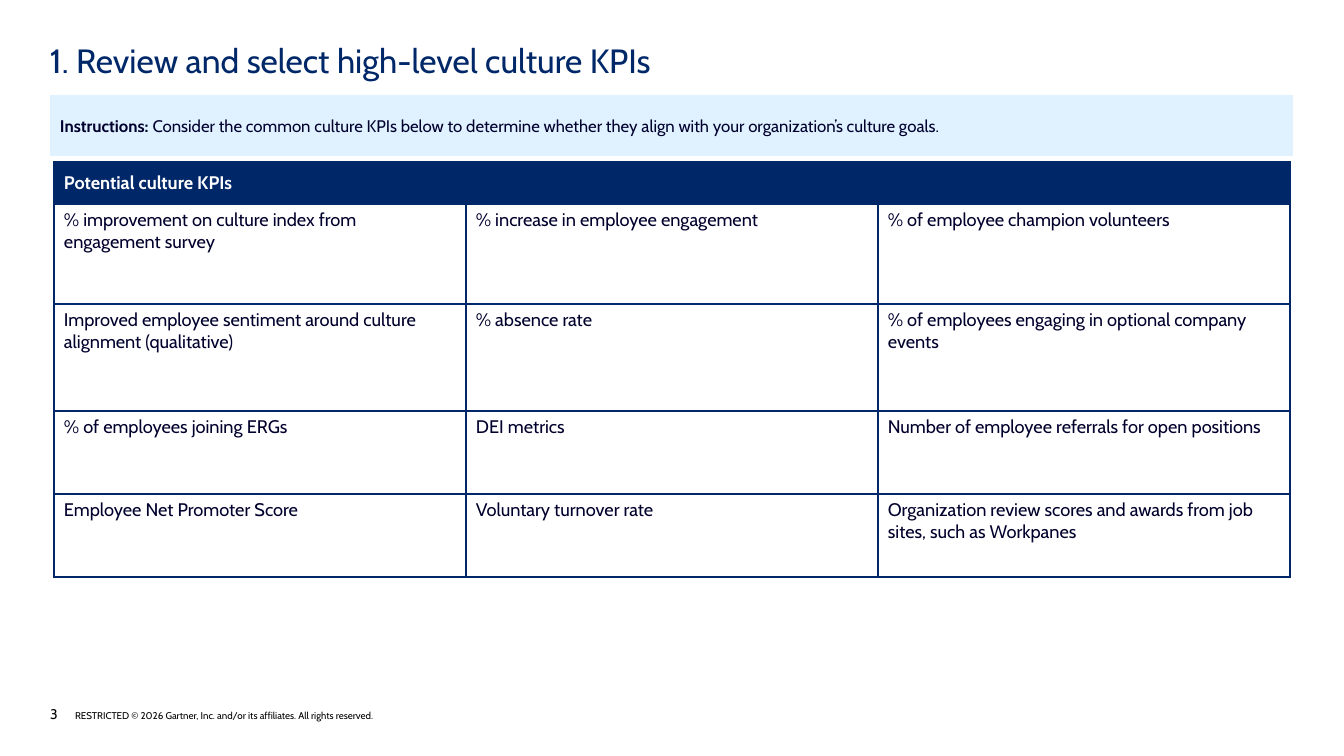
"""Build the slide for reviewing and selecting high-level culture KPIs."""
from dataclasses import dataclass

from lxml import etree
from pptx import Presentation
from pptx import util as u
from pptx.dml.color import RGBColor
from pptx.enum import shapes, text
from pptx.oxml.ns import qn

TITLE = "1. Review and select high-level culture KPIs"
INSTRUCTIONS = (
    "Instructions:",
    " Consider the common culture KPIs below to determine whether they align "
    "with your organization’s culture goals.",
)
TABLE_HEADING = "Potential culture KPIs"
KPIS = [
    ("% improvement on culture index from engagement survey",
     "% increase in employee engagement",
     "% of employee champion volunteers"),
    ("Improved employee sentiment around culture alignment (qualitative)",
     "% absence rate",
     "% of employees engaging in optional company events"),
    ("% of employees joining ERGs",
     "DEI metrics",
     "Number of employee referrals for open positions"),
    ("Employee Net Promoter Score",
     "Voluntary turnover rate",
     "Organization review scores and awards from job sites, such as Workpanes"),
]
PAGE_NUMBER = "3"
COPYRIGHT = "\tRESTRICTED © 2026 Gartner, Inc. and/or its affiliates. All rights reserved."

SLIDE_SIZE = (1344, 756)
LEFT, WIDTH = 50, 1243
TITLE_BOX = (LEFT, 40, WIDTH, 49)
BANNER_BOX = (LEFT, 95, WIDTH, 61)
FOOTER_BOX = (LEFT, 705, 805, 17)
FOOTER_INDENT = 25
TABLE_ORIGIN = (54, 162)
COLUMN_WIDTH = 412
ROW_HEIGHTS = (42, 100, 107, 83, 83)
INSETS = (10, 5, 10, 5)


@dataclass(frozen=True)
class Theme:
    """Hold the font, colours and type sizes."""
    font: str = "Cabin"
    navy: str = "002869"
    ink: str = "00002D"
    pale: str = "E0F1FF"
    white: str = "FFFFFF"
    black: str = "000000"
    title: int = 24
    banner: int = 12
    table: int = 13
    page: int = 10
    copyright: int = 7
    border: float = 1.5


THEME = Theme()


def px(length):
    """Turn px into EMU."""
    return u.Emu(round(length * 914400 / 100.8))


def box(bounds):
    """Turn px bounds into EMU."""
    return [px(length) for length in bounds]


def write(paragraph, words, *, size, color, bold=False):
    """Add one formatted run to a paragraph."""
    run = paragraph.add_run()
    run.text = words
    run.font.name = THEME.font
    run.font.size = u.Pt(size)
    run.font.bold = bold
    run.font.color.rgb = RGBColor.from_string(color)


def set_insets(target, insets):
    """Set the four inner margins of a text frame or cell."""
    for side, inset in zip(("left", "top", "right", "bottom"), insets):
        setattr(target, f"margin_{side}", px(inset))


def prepare_frame(shape, anchor, insets=(0, 0, 0, 0)):
    """Set up a text frame and return its first paragraph."""
    frame = shape.text_frame
    frame.word_wrap = True
    frame.vertical_anchor = anchor
    set_insets(frame, insets)
    frame.paragraphs[0].alignment = text.PP_ALIGN.LEFT
    return frame.paragraphs[0]


def add_borders(cell):
    """Draw a solid border on all four sides of a cell."""
    properties = cell._tc.get_or_add_tcPr()
    for position, side in enumerate(("lnL", "lnR", "lnT", "lnB")):
        line = etree.Element(qn(f"a:{side}"), w=str(u.Pt(THEME.border)))
        fill = etree.SubElement(line, qn("a:solidFill"))
        etree.SubElement(fill, qn("a:srgbClr"), val=THEME.navy)
        properties.insert(position, line)


def add_title(slide):
    """Add the slide title."""
    shape = slide.shapes.add_textbox(*box(TITLE_BOX))
    paragraph = prepare_frame(shape, text.MSO_ANCHOR.TOP)
    write(paragraph, TITLE, size=THEME.title, color=THEME.navy)


def add_banner(slide):
    """Add the instruction banner."""
    shape = slide.shapes.add_shape(shapes.MSO_SHAPE.RECTANGLE, *box(BANNER_BOX))
    shape.shadow.inherit = False
    shape.fill.solid()
    shape.fill.fore_color.rgb = RGBColor.from_string(THEME.pale)
    shape.line.fill.background()
    paragraph = prepare_frame(shape, text.MSO_ANCHOR.MIDDLE, INSETS)
    for words, bold in zip(INSTRUCTIONS, (True, False)):
        write(paragraph, words, size=THEME.banner, color=THEME.ink, bold=bold)


def add_kpi_table(slide):
    """Add the KPI grid under its merged heading."""
    columns = len(KPIS[0])
    rows = [(TABLE_HEADING,) + ("",) * (columns - 1)] + KPIS
    size = (columns * COLUMN_WIDTH, sum(ROW_HEIGHTS))
    table = slide.shapes.add_table(len(rows), columns, *box(TABLE_ORIGIN + size)).table
    table.horz_banding = False
    for column in table.columns:
        column.width = px(COLUMN_WIDTH)
    for row_index, labels in enumerate(rows):
        table.rows[row_index].height = px(ROW_HEIGHTS[row_index])
        heading = row_index == 0
        for column_index, label in enumerate(labels):
            cell = table.cell(row_index, column_index)
            set_insets(cell, INSETS)
            cell.vertical_anchor = text.MSO_ANCHOR.MIDDLE if heading else text.MSO_ANCHOR.TOP
            cell.fill.solid()
            cell.fill.fore_color.rgb = RGBColor.from_string(THEME.navy if heading else THEME.white)
            add_borders(cell)
            if label:
                write(cell.text_frame.paragraphs[0], label, size=THEME.table,
                      color=THEME.white if heading else THEME.ink, bold=heading)
    table.cell(0, 0).merge(table.cell(0, columns - 1))


def add_footer(slide):
    """Add the page number and copyright line."""
    shape = slide.shapes.add_textbox(*box(FOOTER_BOX))
    paragraph = prepare_frame(shape, text.MSO_ANCHOR.BOTTOM)
    properties = paragraph._p.get_or_add_pPr()
    properties.set("marL", str(px(FOOTER_INDENT)))
    properties.set("indent", str(px(-FOOTER_INDENT)))
    write(paragraph, PAGE_NUMBER, size=THEME.page, color=THEME.black)
    write(paragraph, COPYRIGHT, size=THEME.copyright, color=THEME.black)


def main():
    """Create and save the presentation."""
    presentation = Presentation()
    presentation.slide_width, presentation.slide_height = box(SLIDE_SIZE)
    slide = presentation.slides.add_slide(presentation.slide_layouts[6])
    add_footer(slide)
    add_title(slide)
    add_banner(slide)
    add_kpi_table(slide)
    presentation.save("out.pptx")


if __name__ == "__main__":
    main()
